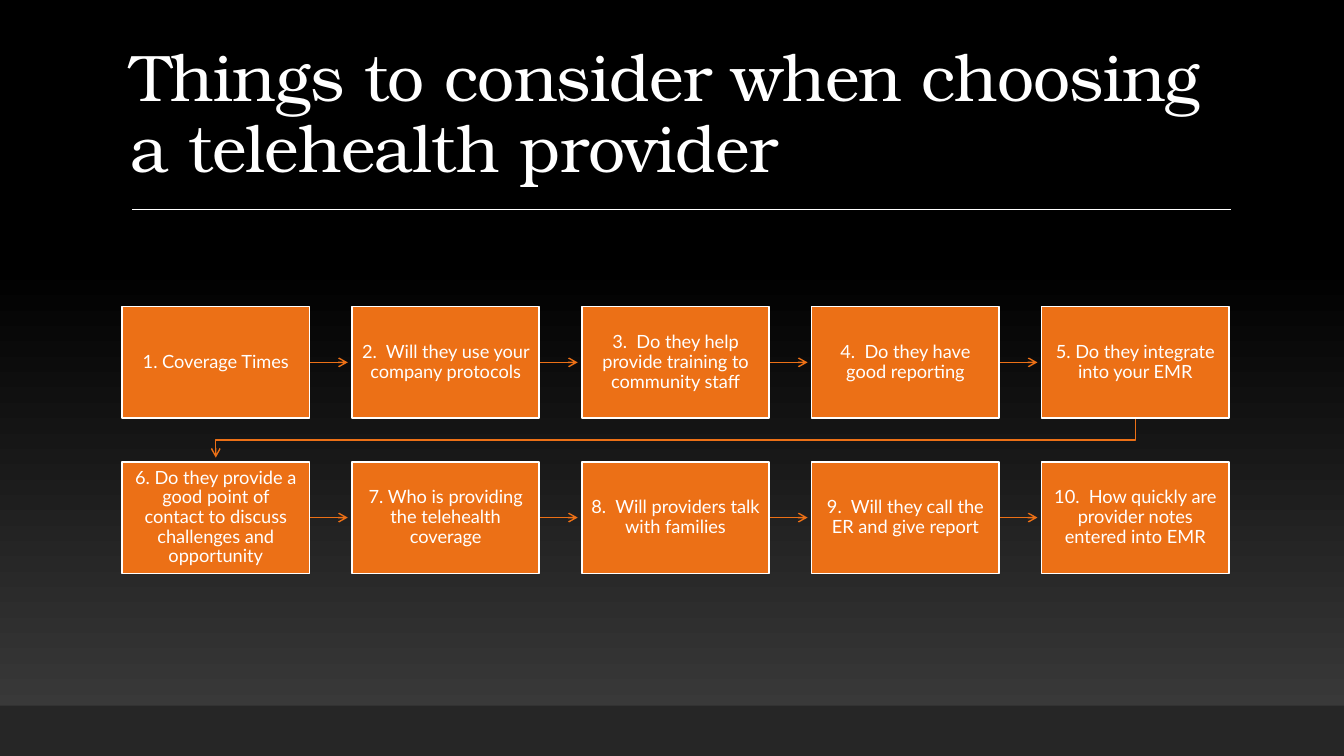
from dataclasses import dataclass

from lxml import etree
from pptx import Presentation
from pptx.dml.color import RGBColor
from pptx.enum.shapes import MSO_CONNECTOR, MSO_SHAPE
from pptx.enum.text import MSO_ANCHOR, PP_ALIGN
from pptx.oxml.ns import qn
from pptx.util import Inches, Pt

RECTANGLE = MSO_SHAPE.RECTANGLE
STRAIGHT = MSO_CONNECTOR.STRAIGHT
MIDDLE, BOTTOM = MSO_ANCHOR.MIDDLE, MSO_ANCHOR.BOTTOM
LEFT, CENTER = PP_ALIGN.LEFT, PP_ALIGN.CENTER


@dataclass(frozen=True)
class Theme:
    white: RGBColor = RGBColor(0xFF, 0xFF, 0xFF)
    black: RGBColor = RGBColor(0x00, 0x00, 0x00)
    glow: RGBColor = RGBColor(0x3F, 0x3F, 0x3F)
    footer: RGBColor = RGBColor(0x26, 0x26, 0x26)
    accent: RGBColor = RGBColor(0xEC, 0x70, 0x16)
    title_font: str = "TeX Gyre Bonum"
    body_font: str = "Lato"
    title_size: float = 47
    body_size: float = 13
    thin: float = 1
    border: float = 1.25


@dataclass(frozen=True)
class Step:
    text: str
    left: float
    top: float

    @property
    def right(self) -> float:
        return self.left + BOX_WIDTH

    @property
    def bottom(self) -> float:
        return self.top + BOX_HEIGHT

    @property
    def center(self) -> float:
        return self.left + BOX_WIDTH / 2

    @property
    def middle(self) -> float:
        return self.top + BOX_HEIGHT / 2


THEME = Theme()
SLIDE_WIDTH, SLIDE_HEIGHT = 13.33, 7.5
FOOTER_HEIGHT = 0.5
BOX_WIDTH, BOX_HEIGHT = 1.86, 1.11
GRID_LEFT, GRID_TOP = 1.21, 3.04
COLUMN_PITCH, ROW_PITCH = 2.28, 1.54
COLUMNS = 5
ARROW_GAP = 0.04
QUESTIONS = (
    "1. Coverage Times",
    "2.  Will they use your company protocols",
    "3.  Do they help provide training to community staff",
    "4.  Do they have good reporting",
    "5. Do they integrate into your EMR",
    "6. Do they provide a good point of contact to discuss challenges and opportunity",
    "7. Who is providing the telehealth coverage",
    "8.  Will providers talk with families",
    "9.  Will they call the ER and give report",
    "10.  How quickly are provider notes entered into EMR",
)


def write(shape, text: str, font: str, size: float, align, anchor) -> None:
    frame = shape.text_frame
    frame.word_wrap = True
    frame.vertical_anchor = anchor
    para = frame.paragraphs[0]
    para.alignment = align
    para.line_spacing = 0.9
    para.font.name = font
    para.font.size = Pt(size)
    para.font.color.rgb = THEME.white
    para.add_run().text = text


def paint_background(page) -> None:
    fill = page.background.fill
    fill.gradient()
    fill.gradient_angle = 90
    for stop, color, position in zip(fill.gradient_stops, (THEME.glow, THEME.black), (0, 0.65)):
        stop.color.rgb = color
        stop.position = position


def add_box(page, left: float, top: float, width: float, height: float, color: RGBColor):
    box = page.shapes.add_shape(RECTANGLE, Inches(left), Inches(top), Inches(width), Inches(height))
    box.shadow.inherit = False
    box.fill.solid()
    box.fill.fore_color.rgb = color
    box.line.fill.background()
    return box


def style_line(shape, color: RGBColor, arrow: bool) -> None:
    shape.line.color.rgb = color
    shape.line.width = Pt(THEME.thin)
    if arrow:
        etree.SubElement(shape.line._get_or_add_ln(), qn("a:tailEnd"), type="arrow")


def add_line(page, left: float, right: float, top: float, color: RGBColor, arrow: bool) -> None:
    line = page.shapes.add_connector(STRAIGHT, Inches(left), Inches(top), Inches(right), Inches(top))
    style_line(line, color, arrow)
    etree.SubElement(line._element.spPr, qn("a:effectLst"))


def add_row_turn(page, start: Step, end: Step) -> None:
    turn = (start.bottom + end.top) / 2
    corners = (
        (start.center, turn),
        (end.center, turn),
        (end.center, end.top - ARROW_GAP),
    )
    builder = page.shapes.build_freeform(Inches(start.center), Inches(start.bottom))
    builder.add_line_segments([(Inches(x), Inches(y)) for x, y in corners], close=False)
    elbow = builder.convert_to_shape()
    elbow.shadow.inherit = False
    elbow.fill.background()
    style_line(elbow, THEME.accent, True)


def add_step(page, step: Step) -> None:
    box = add_box(page, step.left, step.top, BOX_WIDTH, BOX_HEIGHT, THEME.accent)
    box.line.color.rgb = THEME.white
    box.line.width = Pt(THEME.border)
    frame = box.text_frame
    frame.margin_left = frame.margin_right = Inches(0.09)
    frame.margin_top = frame.margin_bottom = Inches(0.1)
    write(box, step.text, THEME.body_font, THEME.body_size, CENTER, MIDDLE)


def add_title(page) -> None:
    title = page.shapes.add_textbox(Inches(1.2), Inches(0.31), Inches(11), Inches(1.59))
    write(title, "Things to consider when choosing a telehealth provider",
          THEME.title_font, THEME.title_size, LEFT, BOTTOM)
    span = title.text_frame.paragraphs[0].runs[0]
    span._r.get_or_add_rPr().set("spc", "-50")


def add_flow(page) -> None:
    steps = [
        Step(text, GRID_LEFT + index % COLUMNS * COLUMN_PITCH, GRID_TOP + index // COLUMNS * ROW_PITCH)
        for index, text in enumerate(QUESTIONS)
    ]
    for start, end in zip(steps, steps[1:]):
        if start.top == end.top:
            add_line(page, start.right, end.left - ARROW_GAP, start.middle, THEME.accent, True)
        else:
            add_row_turn(page, start, end)
    for step in steps:
        add_step(page, step)


def main() -> None:
    deck = Presentation()
    deck.slide_width, deck.slide_height = Inches(SLIDE_WIDTH), Inches(SLIDE_HEIGHT)
    page = deck.slides.add_slide(deck.slide_layouts[6])
    paint_background(page)
    add_title(page)
    add_line(page, 1.31, 12.21, 2.08, THEME.white, False)
    add_box(page, 0, SLIDE_HEIGHT - FOOTER_HEIGHT, SLIDE_WIDTH, FOOTER_HEIGHT, THEME.footer)
    add_flow(page)
    deck.save("out.pptx")


if __name__ == "__main__":
    main()
